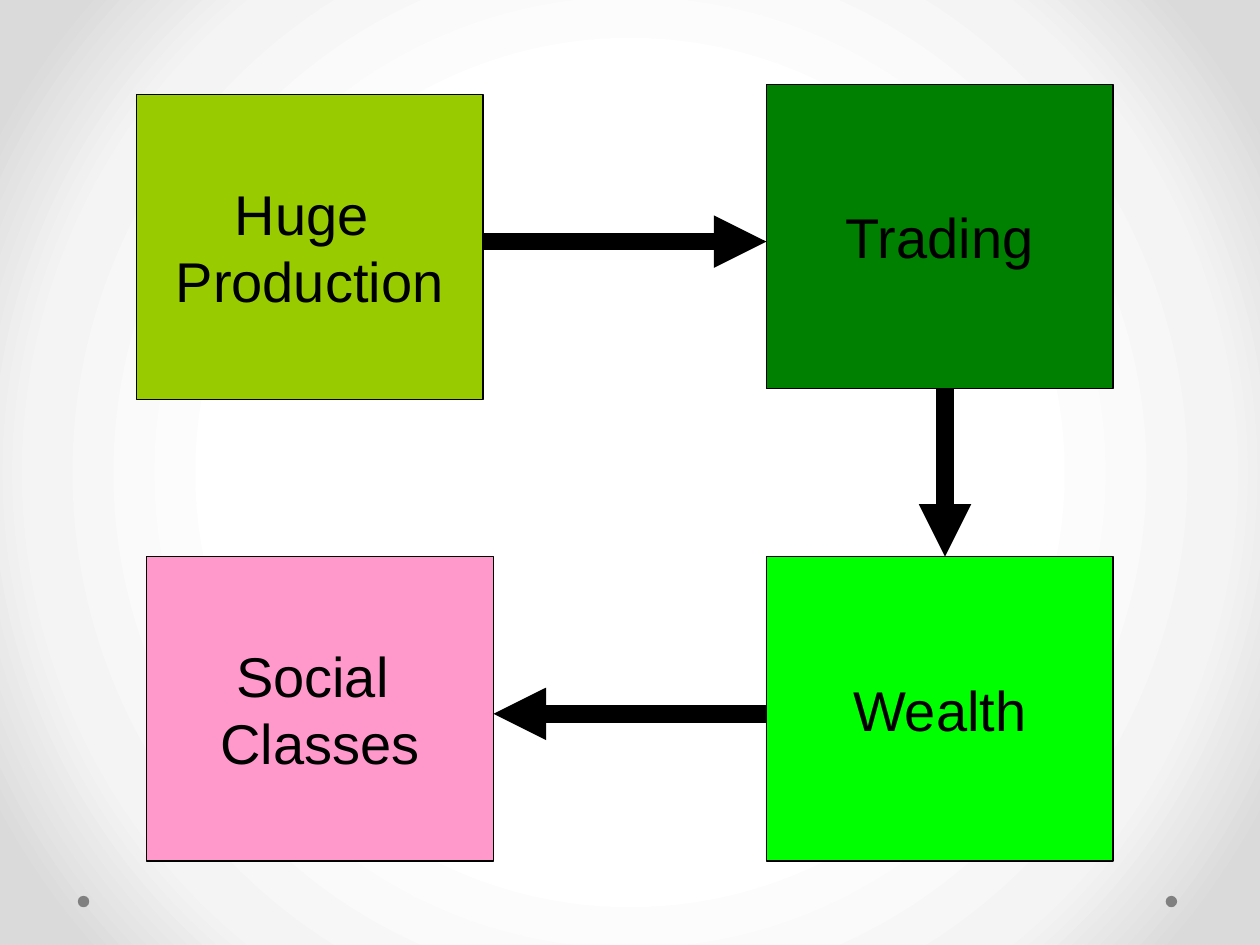
from dataclasses import dataclass

from lxml import etree
from pptx import Presentation
from pptx.dml.color import RGBColor
from pptx.enum import shapes, text
from pptx.oxml import ns, parse_xml
from pptx.util import Cm, Pt

BLACK = "000000"
BOX_WIDTH, BOX_HEIGHT = 6.99, 6.14
RIGHT_COLUMN, LOWER_ROW = 15.45, 11.22
DOT_SIZE, DOT_TOP = 0.23, 18.06
BACKGROUND_STOPS = ((50, "FFFFFF"), (76, "F4F4F4"), (92, "DADADA"))


@dataclass
class Box:
    lines: str
    left: float
    top: float
    color: str


@dataclass
class Arrow:
    start: tuple[float, float]
    end: tuple[float, float]


PRODUCTION = Box("Huge \nProduction", 2.75, 1.91, "99CC00")
TRADING = Box("Trading", RIGHT_COLUMN, 1.7, "008000")
WEALTH = Box("Wealth", RIGHT_COLUMN, LOWER_ROW, "00FF00")
CLASSES = Box("Social \nClasses", 2.96, LOWER_ROW, "FF99CC")

UPPER_ARROW_Y, LOWER_ARROW_Y, DOWN_ARROW_X = 4.87, 14.39, 19.05
ARROWS = (
    Arrow((PRODUCTION.left + BOX_WIDTH, UPPER_ARROW_Y), (RIGHT_COLUMN, UPPER_ARROW_Y)),
    Arrow((DOWN_ARROW_X, TRADING.top + BOX_HEIGHT), (DOWN_ARROW_X, LOWER_ROW)),
    Arrow((RIGHT_COLUMN, LOWER_ARROW_Y), (CLASSES.left + BOX_WIDTH, LOWER_ARROW_Y)),
)


def paint(color_format, color: str) -> None:
    color_format.rgb = RGBColor.from_string(color)


def set_background(slide) -> None:
    """Fill the slide with a gradient that spreads from its centre."""
    slide.background.fill.gradient()
    gradient = slide.element.find(".//" + ns.qn("a:gradFill"))
    stops = "".join(
        f'<a:gs pos="{position * 1000}"><a:srgbClr val="{color}"/></a:gs>'
        for position, color in BACKGROUND_STOPS
    )
    radial = parse_xml(
        f'<a:gradFill {ns.nsdecls("a")} rotWithShape="1"><a:gsLst>{stops}</a:gsLst>'
        '<a:path path="circle"><a:fillToRect l="50000" t="50000" r="50000" b="50000"/>'
        "</a:path></a:gradFill>"
    )
    gradient.getparent().replace(gradient, radial)


def add_filled_shape(slide, kind, left: float, top: float, width: float, height: float, color: str):
    shape = slide.shapes.add_shape(kind, Cm(left), Cm(top), Cm(width), Cm(height))
    shape.shadow.inherit = False
    shape.fill.solid()
    paint(shape.fill.fore_color, color)
    return shape


def add_dot(slide, left: float) -> None:
    dot = add_filled_shape(slide, shapes.MSO_SHAPE.OVAL, left, DOT_TOP, DOT_SIZE, DOT_SIZE, "808080")
    dot.line.fill.background()


def add_box(slide, box: Box) -> None:
    shape = add_filled_shape(
        slide, shapes.MSO_SHAPE.RECTANGLE, box.left, box.top, BOX_WIDTH, BOX_HEIGHT, box.color
    )
    paint(shape.line.color, BLACK)
    shape.line.width = Pt(0.75)
    frame = shape.text_frame
    frame.text = box.lines
    frame.word_wrap = False
    frame.vertical_anchor = text.MSO_ANCHOR.MIDDLE
    for paragraph in frame.paragraphs:
        paragraph.alignment = text.PP_ALIGN.CENTER
        for run in paragraph.runs:
            run.font.name = "Arial"
            run.font.size = Pt(32)
            paint(run.font.color, BLACK)


def add_arrow(slide, arrow: Arrow) -> None:
    points = [Cm(value) for value in (*arrow.start, *arrow.end)]
    connector = slide.shapes.add_connector(shapes.MSO_CONNECTOR.STRAIGHT, *points)
    paint(connector.line.color, BLACK)
    connector.line.width = Pt(10)
    line = connector.line._get_or_add_ln()
    etree.SubElement(line, ns.qn("a:tailEnd"), type="triangle")
    etree.SubElement(line.getparent(), ns.qn("a:effectLst"))


def main() -> None:
    presentation = Presentation()
    presentation.slide_width, presentation.slide_height = Cm(25.4), Cm(19.05)
    slide = presentation.slides.add_slide(presentation.slide_layouts[6])
    set_background(slide)
    for left in (23.5, 1.57):
        add_dot(slide, left)
    for box in (WEALTH, TRADING, CLASSES, PRODUCTION):
        add_box(slide, box)
    for arrow in ARROWS:
        add_arrow(slide, arrow)
    presentation.save("out.pptx")


if __name__ == "__main__":
    main()
